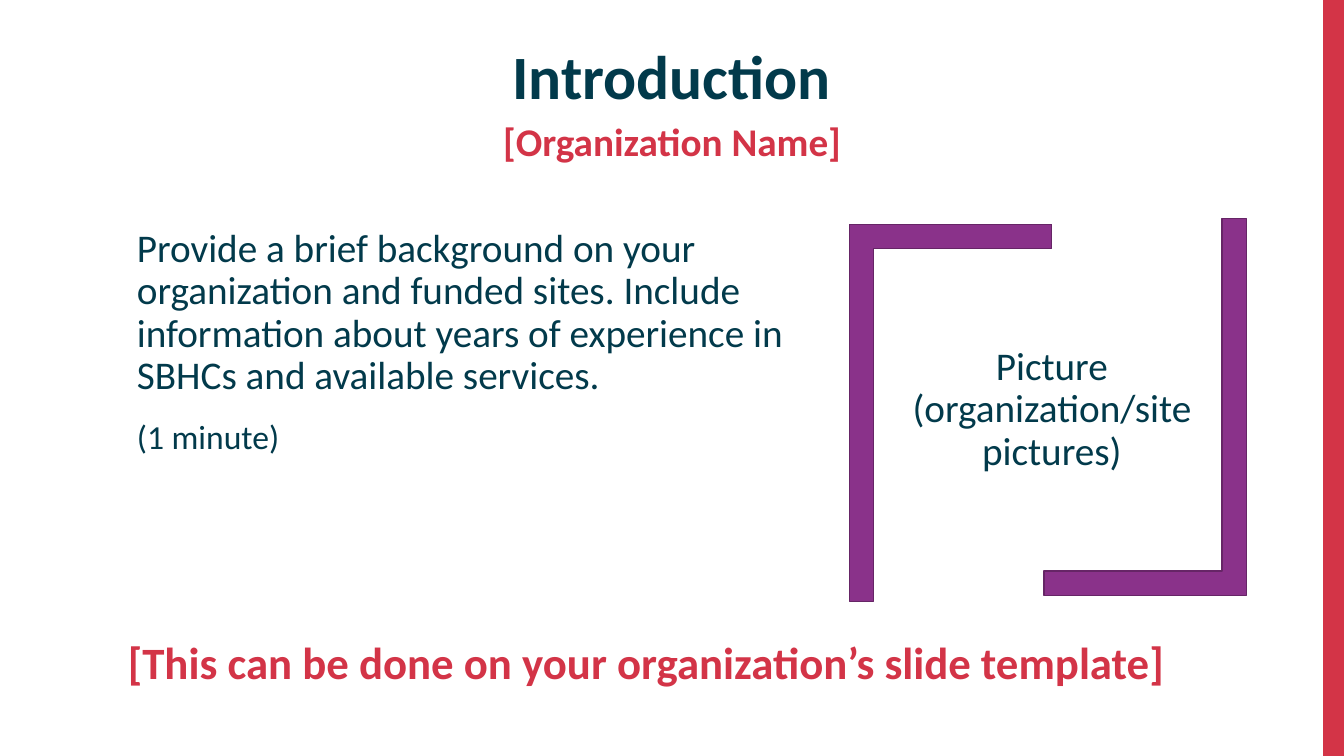
from pptx import Presentation
from pptx.dml.color import RGBColor
from pptx.enum.shapes import MSO_SHAPE as SHAPE
from pptx.enum.text import MSO_ANCHOR as ANCHOR, PP_ALIGN as ALIGN
from pptx.util import Pt

NAVY, RED, PURPLE, PLUM = "023A4B", "D33447", "8A328A", "662566"


def paint(color_format, hex_color):
    """Give a fill or font colour format a solid hex colour."""
    color_format.rgb = RGBColor.from_string(hex_color)


def add_solid(slide, preset, box, fill, outline=None):
    """Add a flat preset shape with an optional outline."""
    solid = slide.shapes.add_shape(preset, *map(Pt, box))
    solid.shadow.inherit = False
    solid.fill.solid()
    paint(solid.fill.fore_color, fill)
    if outline:
        paint(solid.line.color, outline)
        solid.line.width = Pt(1)
    else:
        solid.line.fill.background()
    return solid


def add_text(slide, box, lines, color, bold=False, align=ALIGN.LEFT,
             anchor=ANCHOR.TOP, spacing=0.9, before=10, after=0):
    """Add a wrapped text box with one paragraph per (wording, size) pair."""
    frame = slide.shapes.add_textbox(*map(Pt, box)).text_frame
    frame.word_wrap = True
    frame.vertical_anchor = anchor
    for index, (wording, size) in enumerate(lines):
        paragraph = frame.add_paragraph() if index else frame.paragraphs[0]
        paragraph.text = wording
        paragraph.alignment = align
        paragraph.line_spacing = spacing
        paragraph.space_before = Pt(before if index else 0)
        paragraph.space_after = Pt(after)
        paragraph.font.name = "Calibri"
        paragraph.font.size = Pt(size)
        paragraph.font.bold = bold
        paint(paragraph.font.color, color)


def add_heading(slide, left, top, width):
    """Place the title with the organization name below it."""
    title_height = 41.5
    add_text(slide, (left, top, width, title_height), [("Introduction", 44)],
             NAVY, True, ALIGN.CENTER, ANCHOR.BOTTOM)
    add_text(slide, (left, top + title_height, width, 36),
             [("[Organization Name]", 28)], RED, True, ALIGN.CENTER)


def add_background(slide, box):
    """Place the instructions on the organization's background."""
    add_text(slide, box, [
        ("Provide a brief background on your organization and funded sites. "
         "Include information about years of experience in SBHCs and "
         "available services.", 28),
        ("(1 minute)", 24)], NAVY, after=6)


def add_picture_frame(slide, left, top, width, height):
    """Place two facing corner brackets around the picture prompt."""
    long_arm, short_arm = 269.3, 144.7
    inset = (long_arm - short_arm) / 2
    brackets = [(90, left, top + height - long_arm),
                (270, left + width - short_arm, top)]
    for rotation, bracket_left, bracket_top in brackets:
        bracket = add_solid(slide, SHAPE.CORNER,
                            (bracket_left - inset, bracket_top + inset,
                             long_arm, short_arm), PURPLE, PLUM)
        bracket.rotation = rotation
        bracket.adjustments[0] = bracket.adjustments[1] = 0.12
    add_text(slide, (left + 11.9, top + 88.2, width - 18, 101.5),
             [("Picture (organization/site pictures)", 28)],
             NAVY, align=ALIGN.CENTER)


def build_introduction(slide, width, height):
    """Compose the introduction slide."""
    edge = 14.8
    add_solid(slide, SHAPE.RECTANGLE, (width - edge, 0, edge, height), RED)
    add_heading(slide, 90, 42.5, width - 180)
    add_background(slide, (90.7, 159.8, 550, 260.6))
    add_picture_frame(slide, 606.6, 155.9, 283.7, 273.6)
    add_text(slide, (84.2, 450, 777, 46),
             [("[This can be done on your organization’s slide template]", 32)],
             RED, True, spacing=1)


def main():
    """Build and save the presentation."""
    deck = Presentation()
    deck.slide_width, deck.slide_height = Pt(960), Pt(540)
    build_introduction(deck.slides.add_slide(deck.slide_layouts[6]), 960, 540)
    deck.save("out.pptx")


if __name__ == "__main__":
    main()
